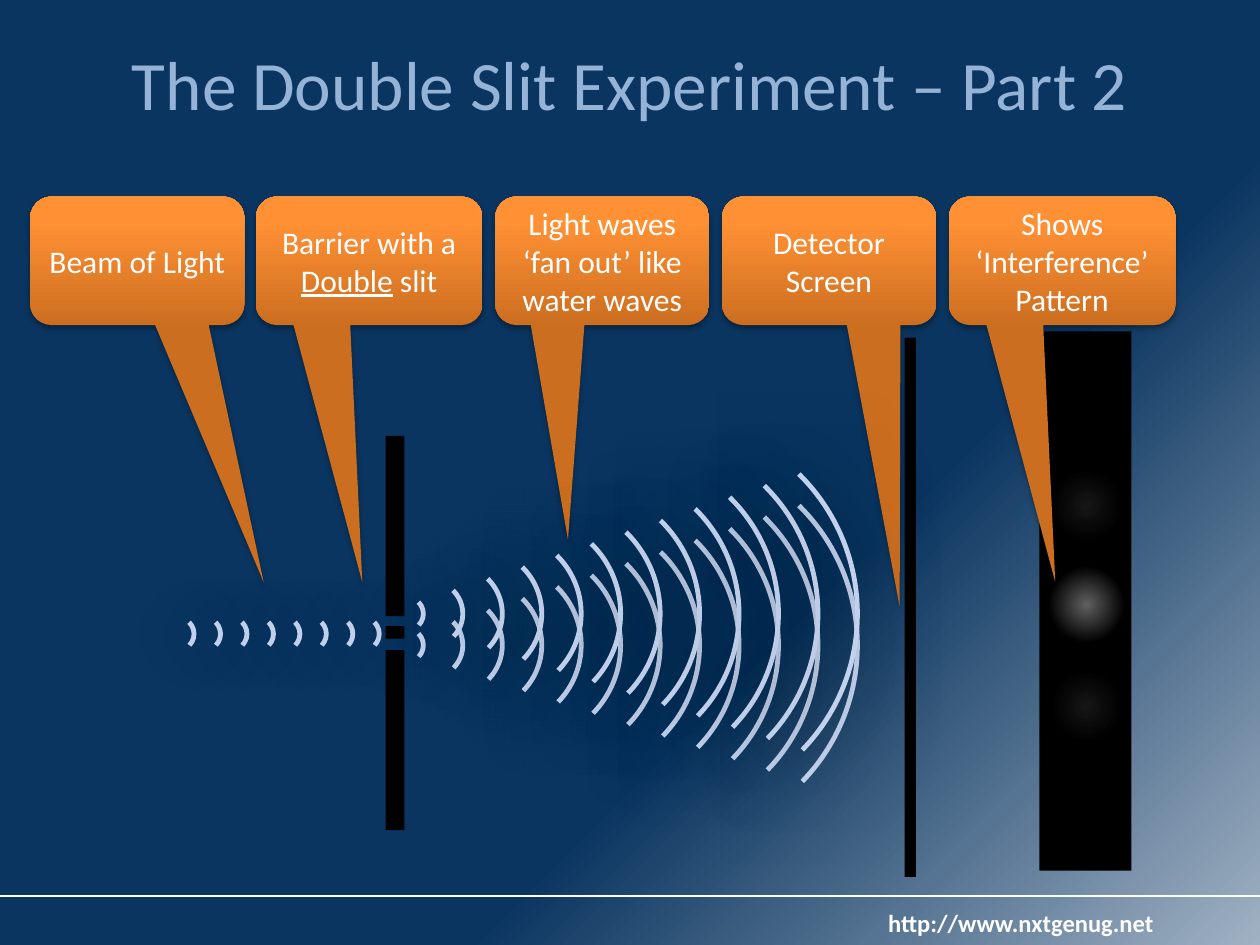
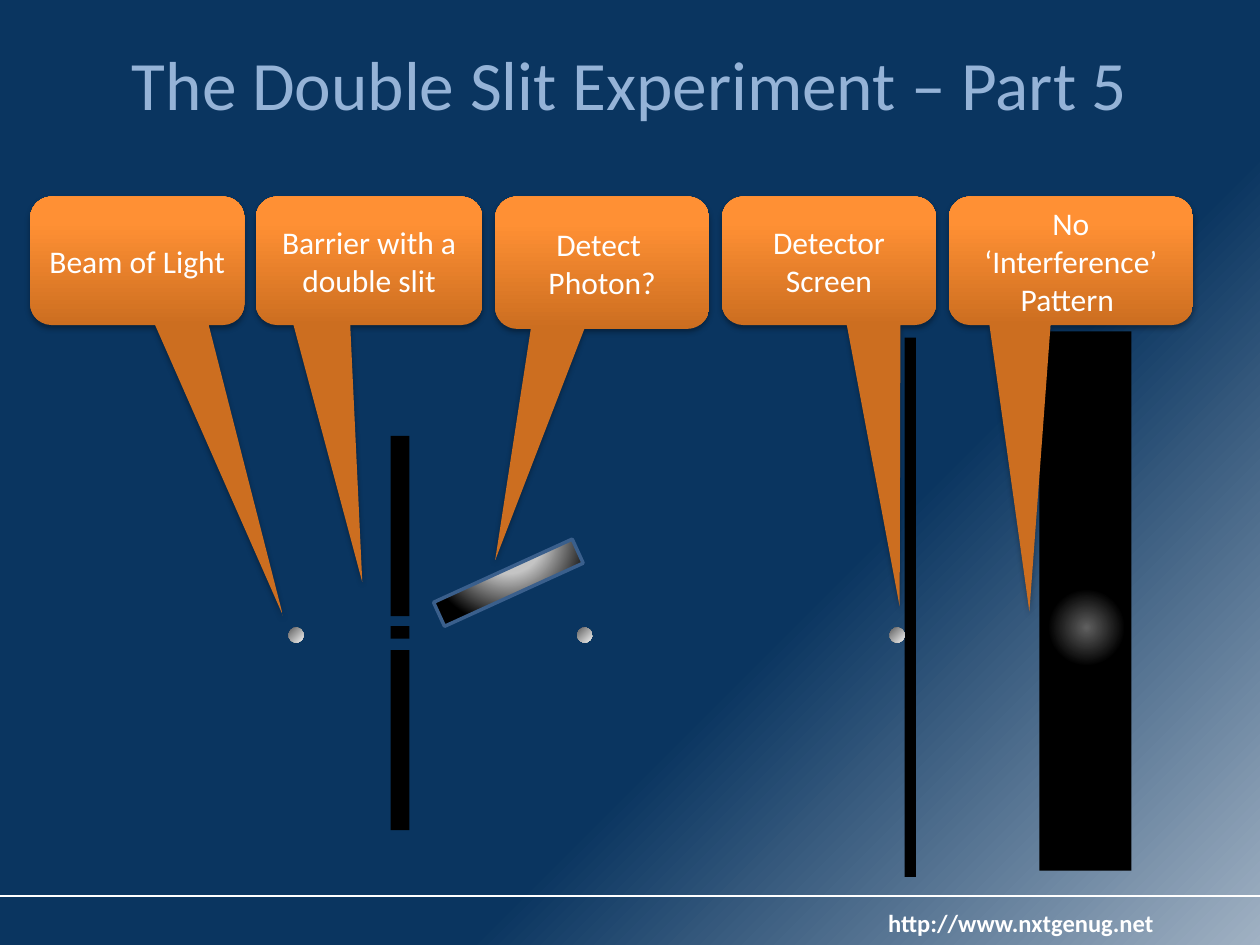
import lxml.etree
import pptx
import pptx.dml.color
import pptx.enum.shapes
import pptx.enum.text
import pptx.oxml
import pptx.oxml.ns
import pptx.util

Inches, Pt = pptx.util.Inches, pptx.util.Pt
RGB = pptx.dml.color.RGBColor.from_string
KIND = pptx.enum.shapes.MSO_SHAPE
ALIGN, ANCHOR = pptx.enum.text.PP_ALIGN, pptx.enum.text.MSO_ANCHOR
QN = pptx.oxml.ns.qn


class Theme:
    font = "Calibri"
    head, note, foot = Pt(39.6), Pt(18), Pt(14)
    title, white, black = "95B3D7", "FFFFFF", "000000"
    wave, edge = "C2D1ED", "3A5F8C"
    # Blends: stops of (position, colour, opacity), then direction
    corner = '<a:path path="circle"><a:fillToRect l="100000" t="100000"/></a:path>'
    centre = '<a:path path="circle"><a:fillToRect l="50000" t="50000" r="50000" b="50000"/></a:path>'
    above = '<a:path path="circle"><a:fillToRect l="50000" t="-80000" r="50000" b="180000"/></a:path>'
    back = [(0, "A0B1C3", 100), (36, "0A3560", 100)], corner
    orange = ([(0, "CC6E20", 100), (80, "FF9034", 100), (100, "FF9136", 100)],
              '<a:lin ang="16200000" scaled="0"/>')
    ball = [(0, "FFFFFF", 100), (97, "595959", 100)], corner
    mirror = [(0, "CCCCCC", 100), (40, "C4C4C4", 100), (100, "000000", 100)], above
    bright = [(0, "FFFFFF", 38), (37, "FFFFFF", 0), (100, "FFFFFF", 0)], centre
    dim = [(0, "FFFFFF", 9), (37, "FFFFFF", 0), (100, "FFFFFF", 0)], centre
    # Shadows: opacity, blur, distance
    drop, halo = (35, 3.1, 1.8), (51, 46, 0)


def blend(fill, props, grade):
    """Give a fill a gradient of the theme."""
    stops, way = grade
    fill.solid()
    marks = "".join(
        f'<a:gs pos="{pos * 1000}"><a:srgbClr val="{tint}">'
        f'<a:alpha val="{alpha * 1000}"/></a:srgbClr></a:gs>'
        for pos, tint, alpha in stops)
    ns = pptx.oxml.ns.nsdecls("a")
    props.replace(props.find(QN("a:solidFill")), pptx.oxml.parse_xml(
        f'<a:gradFill {ns} rotWithShape="1"><a:gsLst>{marks}</a:gsLst>{way}</a:gradFill>'))


def draw(slide, kind, box, fill=None, line=None, width=0, shade=None):
    """Add a preset shape with fill, line and shadow."""
    item = slide.shapes.add_shape(kind, *[Inches(size) for size in box])
    item.shadow.inherit = False
    props = item._element.spPr
    if fill is None:
        item.fill.background()
    elif isinstance(fill, str):
        item.fill.solid()
        item.fill.fore_color.rgb = RGB(fill)
    else:
        blend(item.fill, props, fill)
    if line:
        item.line.color.rgb = RGB(line)
        item.line.width = Pt(width)
    else:
        item.line.fill.background()
    if shade:
        alpha, blur, dist = shade
        cast = lxml.etree.SubElement(
            props.find(QN("a:effectLst")), QN("a:outerShdw"), dir="5400000",
            blurRad=str(Pt(blur)), dist=str(Pt(dist)), rotWithShape="0")
        tint = lxml.etree.SubElement(cast, QN("a:srgbClr"), val=Theme.black)
        lxml.etree.SubElement(tint, QN("a:alpha"), val=str(alpha * 1000))
    return item


# Callouts: left, width, height, tip, text (underscores mark underlining)
screen_note = (5.73, 1.7, 1.02, (0.33, 2.69), "Detector Screen")
parts = [
    dict(title="The Double Slit Experiment – Part 2", wall=3.06,
         spots=[(4.26, 1.08, Theme.bright), (5.16, 0.88, Theme.dim), (3.57, 0.88, Theme.dim)],
         notes=[(0.24, 1.7, 1.02, (0.59, 2.5), "Beam of Light"),
                (2.03, 1.8, 1.02, (-0.03, 2.5), "Barrier with a _Double_ slit"),
                (3.93, 1.7, 1.02, (-0.16, 2.17), "Light waves ‘fan out’ like water waves"),
                screen_note,
                (7.53, 1.8, 1.02, (-0.03, 2.5), "Shows ‘Interference’ Pattern")]),
    dict(title="The Double Slit Experiment – Part 5", wall=3.1,
         spots=[(4.44, 1.08, Theme.bright)],
         notes=[(0.24, 1.7, 1.02, (0.68, 2.76), "Beam of Light"),
                (2.03, 1.8, 1.02, (-0.03, 2.5), "Barrier with a double slit"),
                (3.93, 1.7, 1.05, (-0.5, 2.25), "Detect \nPhoton?"),
                screen_note,
                (7.53, 1.94, 1.02, (-0.17, 2.73), "No\n‘Interference’ Pattern ")]),
]

deck = pptx.Presentation()
deck.slide_width, deck.slide_height = Inches(10), Inches(7.5)

# Shared background
master = deck.slide_master
ground = master.background.fill
ground.solid()
blend(ground, master.element.xpath(".//p:bgPr")[0], Theme.back)

slides = []
for part in parts:
    slide = deck.slides.add_slide(deck.slide_layouts[5])
    slides.append(slide)

    # Title
    head = slide.shapes.title
    head.left, head.top, head.width, head.height = [Inches(n) for n in (0.5, 0.3, 9, 0.72)]
    frame = head.text_frame
    frame.text = part["title"]
    frame.auto_size = pptx.enum.text.MSO_AUTO_SIZE.NONE
    frame.vertical_anchor = ANCHOR.MIDDLE
    para = frame.paragraphs[0]
    para.alignment = ALIGN.CENTER
    para.font.name, para.font.size = Theme.font, Theme.head
    para.font.color.rgb = RGB(Theme.title)

    # Footer rule and address
    rule = slide.shapes.add_connector(
        pptx.enum.shapes.MSO_CONNECTOR.STRAIGHT, 0, Inches(7.11), Inches(10), Inches(7.11))
    rule.line.color.rgb = RGB(Theme.white)
    rule.line.width = Pt(1.5)
    lxml.etree.SubElement(rule._element.spPr, QN("a:effectLst"))
    foot = slide.shapes.add_textbox(Inches(6.95), Inches(7.16), Inches(2.32), Inches(0.34))
    foot.text_frame.word_wrap = False
    para = foot.text_frame.paragraphs[0]
    para.text = "http://www.nxtgenug.net"
    para.font.name, para.font.size, para.font.bold = Theme.font, Theme.foot, True
    para.font.color.rgb = RGB(Theme.white)

    # Barrier, detector and screen
    wall = part["wall"]
    for box in [(wall, 3.46, 0.15, 1.43), (wall, 4.97, 0.15, 0.1), (wall, 5.16, 0.15, 1.43),
                (7.18, 2.68, 0.09, 4.28), (8.25, 2.63, 0.73, 4.28)]:
        draw(slide, KIND.RECTANGLE, box, Theme.black)

    # Callouts
    for left, width, height, tip, text in part["notes"]:
        note = draw(slide, KIND.ROUNDED_RECTANGULAR_CALLOUT, (left, 1.56, width, height),
                    Theme.orange, shade=Theme.drop)
        note.adjustments[0], note.adjustments[1] = tip
        frame = note.text_frame
        frame.word_wrap = True
        frame.vertical_anchor = ANCHOR.MIDDLE
        for row, words in enumerate(text.split("\n")):
            para = frame.add_paragraph() if row else frame.paragraphs[0]
            for order, piece in enumerate(words.split("_")):
                run = para.add_run()
                run.text = piece
                if order % 2:
                    run.font.underline = True
            para.alignment = ALIGN.CENTER
            para.font.name, para.font.size = Theme.font, Theme.note
            para.font.color.rgb = RGB(Theme.white)

    # Light on the screen
    for top, height, glow in part["spots"]:
        draw(slide, KIND.RECTANGLE, (8.01, top, 1.22, height), glow)

# Waves: the beam, then one fan from each slit, as centre and size
waves = [(2.88 - 0.21 * step, 5.03, 0.26) for step in range(8)]
for mid in (5.12, 4.87):
    waves += [(3.23 + 2.02 * step / 11, mid, 0.26 + 2.85 * step / 11) for step in range(12)]
for across, mid, size in waves:
    arc = draw(slides[0], KIND.ARC, (across - size / 2, mid - size / 2, size, size),
               line=Theme.wave, width=2.75, shade=Theme.halo)
    arc.rotation = 225
    arc.adjustments[0], arc.adjustments[1] = 53.71, 107.44

# Photons and tilted detector
for left in (2.29, 4.58, 7.06):
    ball = draw(slides[1], KIND.OVAL, (left, 4.98, 0.12, 0.12), Theme.ball)
    ball.rotation = 190.5
plate = draw(slides[1], KIND.RECTANGLE, (3.43, 4.52, 1.21, 0.21), Theme.mirror, Theme.edge, 2)
plate.rotation = 335.5

deck.save("out.pptx")
